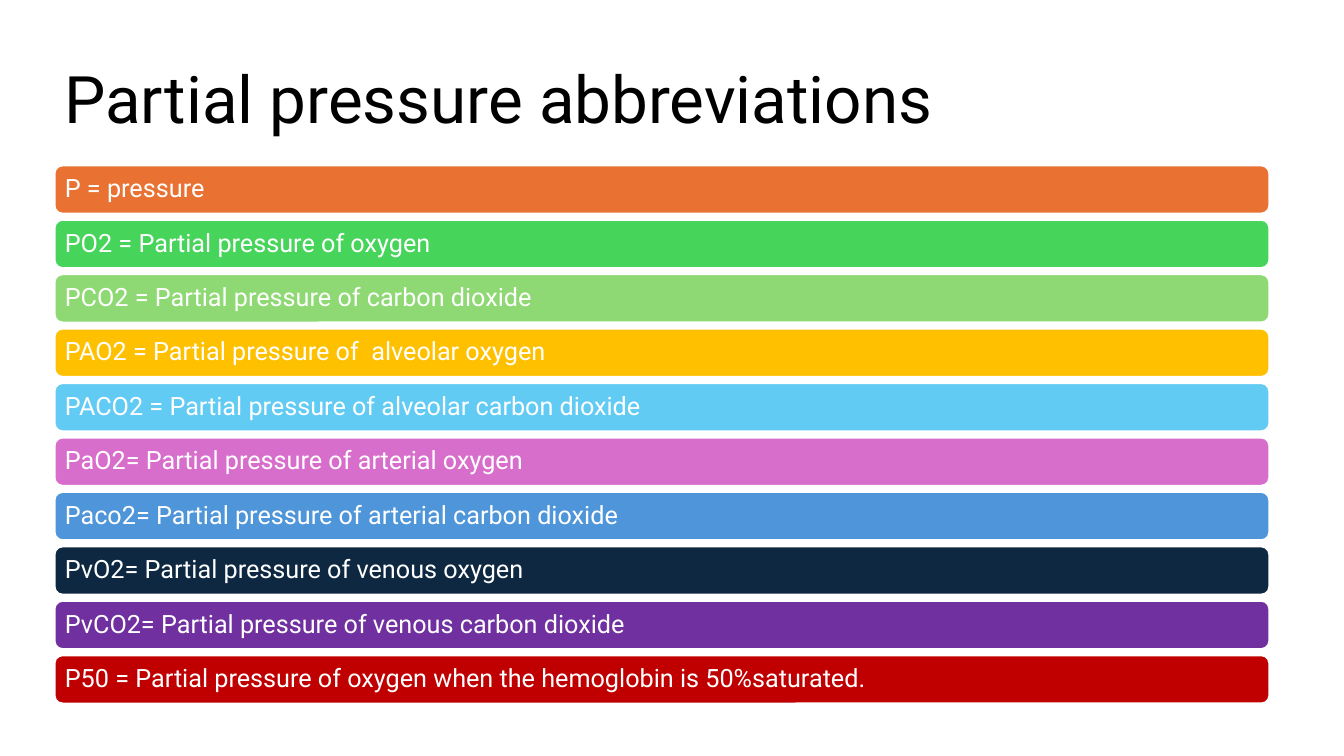
import pptx
import pptx.dml.color
import pptx.enum.shapes
import pptx.enum.text
import pptx.util

Inches = pptx.util.Inches
Pt = pptx.util.Pt

COLOURS = {
    "black": "000000",
    "white": "FFFFFF",
    "orange": "E97132",
    "green": "47D45A",
    "light green": "8ED973",
    "gold": "FFC000",
    "sky": "61CBF4",
    "pink": "D86ECC",
    "blue": "4E95D9",
    "navy": "0E2841",
    "purple": "7030A0",
    "red": "C00000",
}

ABBREVIATIONS = [
    ("orange", "P = pressure"),
    ("green", "PO2 = Partial pressure of oxygen"),
    ("light green", "PCO2 = Partial pressure of carbon dioxide"),
    ("gold", "PAO2 = Partial pressure of  alveolar oxygen"),
    ("sky", "PACO2 = Partial pressure of alveolar carbon dioxide"),
    ("pink", "PaO2= Partial pressure of arterial oxygen"),
    ("blue", "Paco2= Partial pressure of arterial carbon dioxide"),
    ("navy", "PvO2= Partial pressure of venous oxygen"),
    ("purple", "PvCO2= Partial pressure of venous carbon dioxide"),
    ("red", "P50 = Partial pressure of oxygen when the hemoglobin is 50%saturated."),
]


def colour(name):
    return pptx.dml.color.RGBColor.from_string(COLOURS[name])


def write(box, text, size, ink, inset=0.1):
    frame = box.text_frame
    frame.word_wrap = True
    frame.vertical_anchor = pptx.enum.text.MSO_ANCHOR.MIDDLE
    frame.margin_left = frame.margin_right = Inches(inset)
    frame.margin_top = frame.margin_bottom = Inches(0.05)
    para = frame.paragraphs[0]
    para.alignment = pptx.enum.text.PP_ALIGN.LEFT
    para.line_spacing = 0.9
    span = para.add_run()
    span.text = text
    span.font.name = "Roboto"
    span.font.size = Pt(size)
    span.font.color.rgb = colour(ink)


deck = pptx.Presentation()
deck.slide_width = Inches(13.33)
deck.slide_height = Inches(7.5)
page = deck.slides.add_slide(deck.slide_layouts[6])

left, width = Inches(0.54), Inches(12.05)

title = page.shapes.add_textbox(left, Inches(0.61), width, Inches(0.81))
write(title, "Partial pressure abbreviations", size=46.8, ink="black")

for row, (fill, text) in enumerate(ABBREVIATIONS):
    bar = page.shapes.add_shape(
        pptx.enum.shapes.MSO_SHAPE.ROUNDED_RECTANGLE,
        left, Inches(1.64 + 0.54 * row), width, Inches(0.48),
    )
    bar.shadow.inherit = False
    bar.fill.solid()
    bar.fill.fore_color.rgb = colour(fill)
    bar.line.color.rgb = colour("white")
    bar.line.width = Pt(1.5)
    write(bar, text, size=18, ink="white", inset=0.08)

deck.save("out.pptx")
